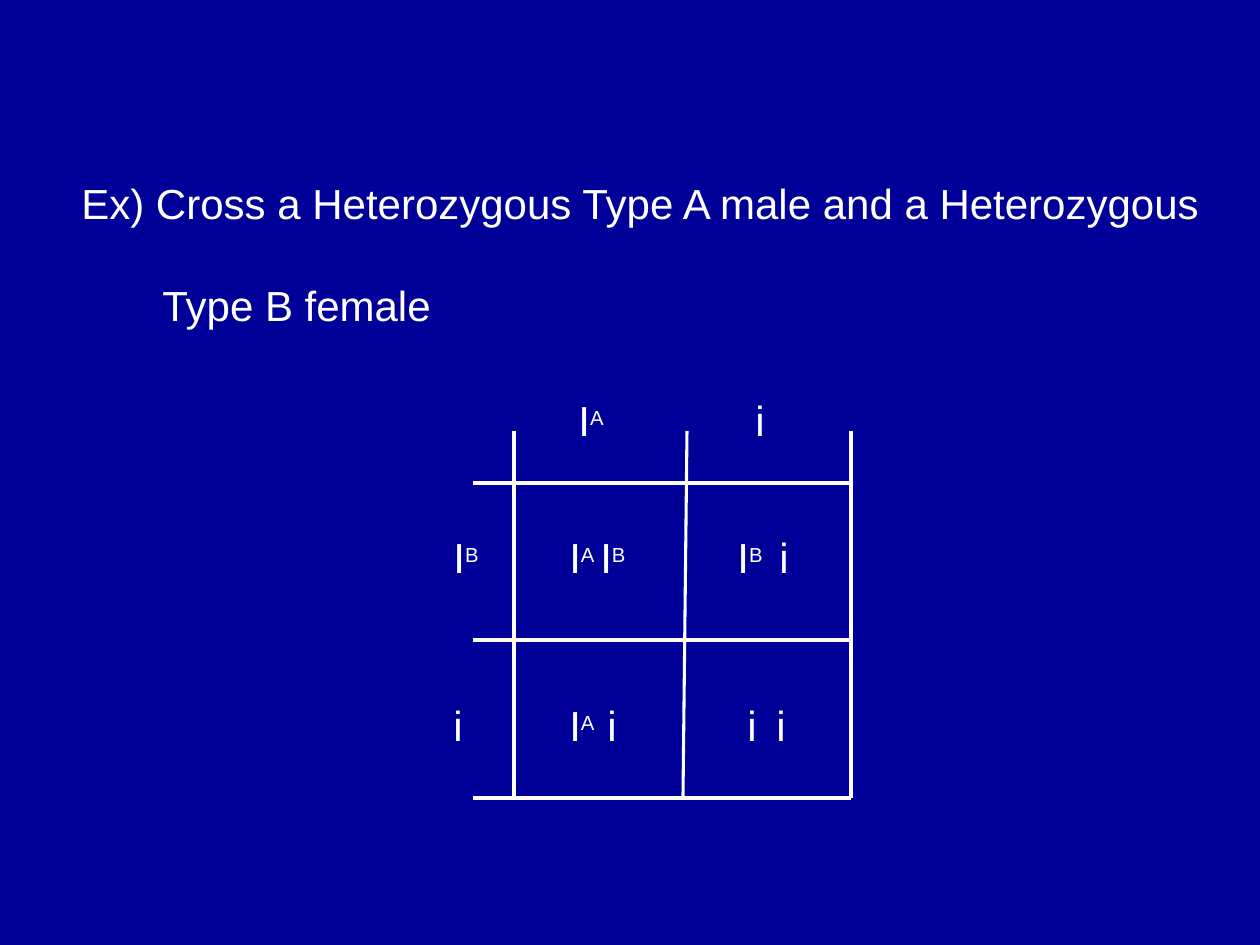
from pptx import Presentation
from pptx import util as u
from pptx.dml.color import RGBColor
from pptx.enum import shapes, text
from lxml import etree

NAVY = RGBColor(0x00, 0x00, 0x99)
WHITE = RGBColor(0xFF, 0xFF, 0xFF)
DRAWING = "{http://schemas.openxmlformats.org/drawingml/2006/main}"
PX_PER_INCH = 126


def px(length):
    return u.Emu(round(length * u.Inches(1) / PX_PER_INCH))


class Board:
    """Holds the text and line style and the page being drawn."""

    body = {"name": "Arial", "size": u.Pt(24)}
    raised = {"name": "Arial", "size": u.Pt(20)}
    line_width = u.Pt(1.75)

    def __init__(self, deck):
        self.page = deck.slides.add_slide(deck.slide_layouts[6])
        fill = self.page.background.fill
        fill.solid()
        fill.fore_color.rgb = NAVY

    def line(self, x1, y1, x2, y2):
        line = self.page.shapes.add_connector(
            shapes.MSO_CONNECTOR.STRAIGHT, px(x1), px(y1), px(x2), px(y2))
        line.line.color.rgb = WHITE
        line.line.width = self.line_width
        etree.SubElement(line._element.spPr, DRAWING + "effectLst")

    def box(self, left, top, width, height, wrap):
        frame = self.page.shapes.add_textbox(
            px(left), px(top), px(width), px(height)).text_frame
        frame.word_wrap = wrap
        frame.auto_size = text.MSO_AUTO_SIZE.SHAPE_TO_FIT_TEXT
        return frame

    def span(self, para, words, style):
        span = para.add_run()
        span.text = words
        for name, value in style.items():
            setattr(span.font, name, value)
        span.font.color.rgb = WHITE
        return span

    def question(self, left, top, width, height, first, second):
        frame = self.box(left, top, width, height, True)
        para = frame.paragraphs[0]
        para.space_after = u.Pt(29.5)
        self.span(para, first, self.body)
        para = frame.add_paragraph()
        para._p.get_or_add_pPr().set("marL", str(px(81)))
        self.span(para, second, self.body)

    def allele(self, left, top, letter, superscript=""):
        width = 52 if superscript else 35
        para = self.box(left, top, width, 63, False).paragraphs[0]
        self.span(para, letter, self.body)
        if superscript:
            span = self.span(para, superscript, self.raised)
            span._r.get_or_add_rPr().set("baseline", "30000")


def main():
    deck = Presentation()
    deck.slide_width, deck.slide_height = px(1260), px(945)
    board = Board(deck)

    # Punnett square: the middle upright leans slightly
    for bottom_x, top_x in ((683, 687), (851, 851), (514, 514)):
        board.line(bottom_x, 798, top_x, 431)
    for y in (483, 640, 798):
        board.line(473, y, 851, y)

    # Question
    board.question(69, 171, 1159, 113,
                   "Ex) Cross a Heterozygous Type A male and a Heterozygous",
                   "Type B female")

    # Alleles by row: left edge, letter, superscript
    rows = {
        388: [(566, "I", "A"), (743, "i")],
        525: [(441, "I", "B"), (557, "I", "A"), (588, "I", "B"),
              (725, "I", "B"), (767, "i")],
        693: [(441, "i"), (557, "I", "A"), (595, "i"),
              (735, "i"), (764, "i")],
    }
    for top, alleles in rows.items():
        for left, *letters in alleles:
            board.allele(left, top, *letters)

    deck.save("out.pptx")


if __name__ == "__main__":
    main()
